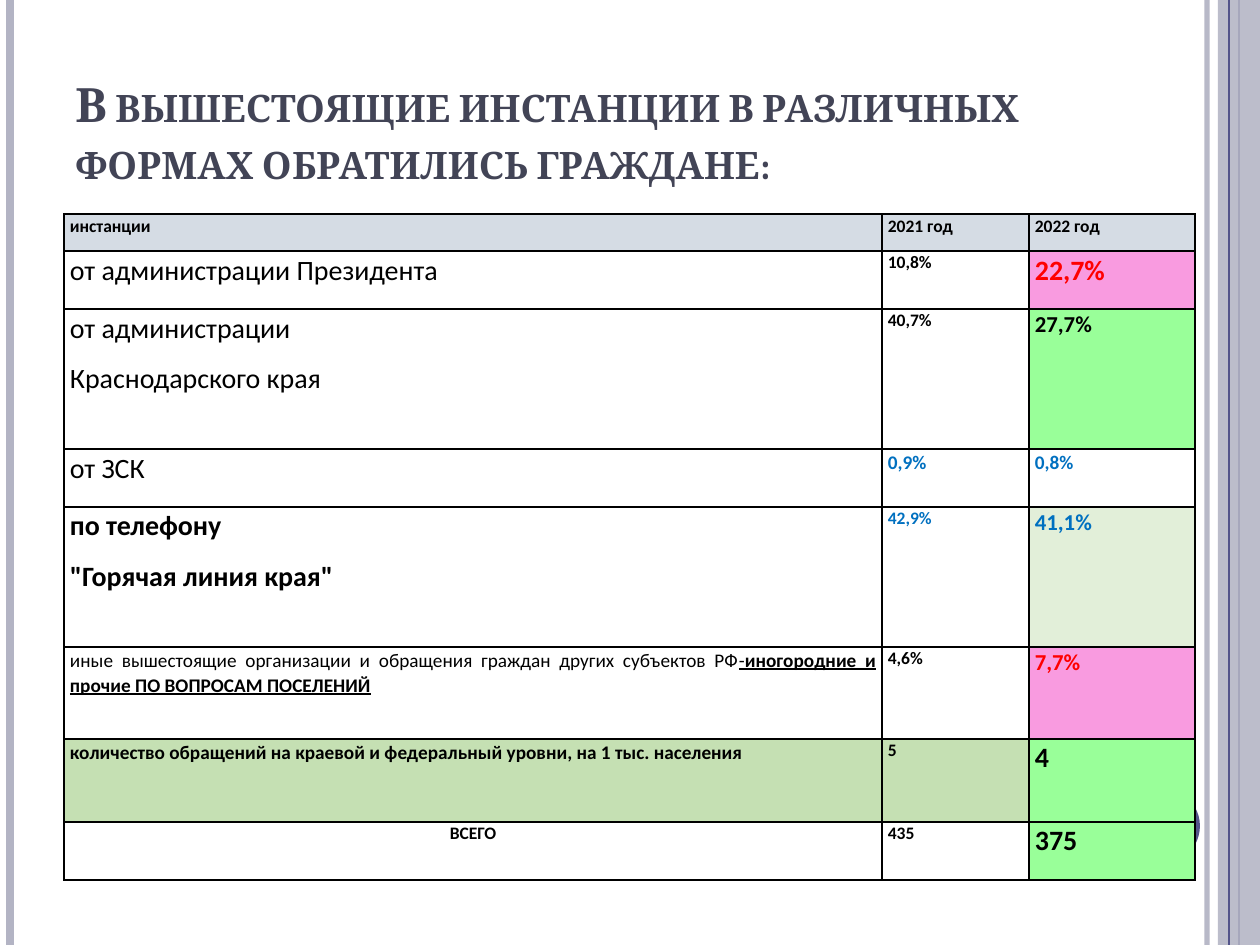
from dataclasses import dataclass
from typing import Optional

import pptx
import pptx.dml.color
import pptx.enum.shapes
import pptx.enum.text
import pptx.oxml
import pptx.oxml.ns
import pptx.util
from lxml import etree

EMU_PER_PX = 914400 / 126
WIDTH, HEIGHT = 1260, 945
BLACK, RED, BLUE = "000000", "FF0000", "0070C0"
INDIGO, LILAC = "53548A", "B3B4C4"
PINK, GREEN, OLIVE, HEADER = "F99BE0", "99FF99", "C5E0B3", "D5DCE4"
Align = pptx.enum.text.PP_ALIGN


@dataclass
class Run:
    text: str
    bold: bool = False
    underline: bool = False


@dataclass
class Cell:
    lines: list[str | list[Run]]
    size: int = 10
    bold: bool = True
    color: str = BLACK
    fill: Optional[str] = None
    align: Align = Align.JUSTIFY


@dataclass
class Rule:
    x: int
    color: str
    points: float
    opacity: int = 100


RULES_BEHIND = [Rule(1207, LILAC, 3, 93), Rule(10, LILAC, 4.5), Rule(1239, INDIGO, 1.5)]
RULE_IN_FRONT = Rule(1229, INDIGO, 0.75)

COLUMN_WIDTHS = [818, 147, 166]
ROWS = [
    (37, [Cell(["инстанции"], fill=HEADER), Cell(["2021 год"], fill=HEADER),
          Cell(["2022 год"], fill=HEADER)]),
    (58, [Cell(["от администрации Президента"], 16, False), Cell(["10,8%"]),
          Cell(["22,7%"], 16, color=RED, fill=PINK)]),
    (140, [Cell(["от администрации", "Краснодарского края"], 16, False), Cell(["40,7%"]),
           Cell(["27,7%"], 13, fill=GREEN)]),
    (58, [Cell(["от ЗСК"], 16, False), Cell(["0,9%"], 11, color=BLUE),
          Cell(["0,8%"], 11, color=BLUE)]),
    (140, [Cell(["по телефону", '"Горячая линия края"'], 16), Cell(["42,9%"], color=BLUE),
           Cell(["41,1%"], 13, color=BLUE, fill="E2EFD9")]),
    (92, [Cell([[Run("иные вышестоящие организации и обращения граждан других субъектов РФ"),
                 Run("-", underline=True),
                 Run("иногородние и прочие ПО ВОПРОСАМ ПОСЕЛЕНИЙ", True, True)]], 11, False),
          Cell(["4,6%"]), Cell(["7,7%"], 13, color=RED, fill=PINK)]),
    (83, [Cell(["количество обращений на краевой и федеральный уровни, на 1 тыс. населения"],
               11, fill=OLIVE),
          Cell(["5"], fill=OLIVE), Cell(["4"], 16, fill=GREEN)]),
    (58, [Cell(["ВСЕГО"], align=Align.CENTER), Cell(["435"]),
          Cell(["375"], 16, fill=GREEN)]),
]


def px(value: int) -> int:
    return round(value * EMU_PER_PX)


def rgb(color: str) -> pptx.dml.color.RGBColor:
    return pptx.dml.color.RGBColor.from_string(color)


def add_element(parent, tag: str, **attributes: str):
    element = etree.SubElement(parent, pptx.oxml.ns.qn(tag))
    for name, value in attributes.items():
        element.set(name, value)
    return element


def set_opacity(element, percent: int) -> None:
    for color in element.iter(pptx.oxml.ns.qn("a:srgbClr")):
        add_element(color, "a:alpha", val=str(percent * 1000))


def set_font(font, name: str, size: int, color: str, bold: bool) -> None:
    font.name = name
    font.size = pptx.util.Pt(size)
    font.bold = bold
    font.color.rgb = rgb(color)


def draw_rule(slide, rule: Rule) -> None:
    line = slide.shapes.add_connector(
        pptx.enum.shapes.MSO_CONNECTOR.STRAIGHT, px(rule.x), 0, px(rule.x), px(HEIGHT))
    line.line.color.rgb = rgb(rule.color)
    line.line.width = pptx.util.Pt(rule.points)
    properties = line._element.spPr
    if rule.opacity < 100:
        set_opacity(properties, rule.opacity)
    add_element(properties, "a:effectLst")


def draw_shape(slide, kind, left: int, top: int, width: int, height: int, color: str):
    shape = slide.shapes.add_shape(kind, px(left), px(top), px(width), px(height))
    shape.shadow.inherit = False
    shape.fill.solid()
    shape.fill.fore_color.rgb = rgb(color)
    shape.line.fill.background()
    return shape


def draw_title(slide, text: str) -> None:
    box = slide.shapes.add_textbox(px(63), px(38), px(1029), px(157))
    frame = box.text_frame
    frame.word_wrap = True
    frame.vertical_anchor = pptx.enum.text.MSO_ANCHOR.BOTTOM
    paragraph = frame.paragraphs[0]
    paragraph.text = text
    set_font(paragraph.font, "Cambria", 27, "424456", True)
    paragraph.runs[0]._r.get_or_add_rPr().set("cap", "small")


def draw_borders(table_cell) -> None:
    properties = table_cell._tc.get_or_add_tcPr()
    for position, side in enumerate(("a:lnL", "a:lnR", "a:lnT", "a:lnB")):
        border = pptx.oxml.parse_xml(
            f'<{side} {pptx.oxml.ns.nsdecls("a")} w="12700"><a:solidFill>'
            f'<a:srgbClr val="{BLACK}"/></a:solidFill></{side}>')
        properties.insert(position, border)


def fill_cell(table_cell, cell: Cell) -> None:
    table_cell.margin_left = table_cell.margin_right = px(6)
    table_cell.margin_top = table_cell.margin_bottom = 0
    if cell.fill:
        table_cell.fill.solid()
        table_cell.fill.fore_color.rgb = rgb(cell.fill)
    else:
        table_cell.fill.background()
    draw_borders(table_cell)
    frame = table_cell.text_frame
    for index, line in enumerate(cell.lines):
        paragraph = frame.add_paragraph() if index else frame.paragraphs[0]
        paragraph.alignment = cell.align
        paragraph.line_spacing = 1.07
        paragraph.space_after = pptx.util.Pt(8)
        set_font(paragraph.font, "Calibri", cell.size, cell.color, cell.bold)
        if isinstance(line, str):
            paragraph.add_run().text = line
            continue
        for part in line:
            run = paragraph.add_run()
            run.text = part.text
            run.font.bold = part.bold
            run.font.underline = part.underline


def draw_table(slide, left: int, top: int) -> None:
    height = sum(row_height for row_height, _ in ROWS)
    table = slide.shapes.add_table(
        len(ROWS), len(COLUMN_WIDTHS), px(left), px(top),
        px(sum(COLUMN_WIDTHS)), px(height)).table
    table.first_row = table.horz_banding = False
    for column, width in zip(table.columns, COLUMN_WIDTHS):
        column.width = px(width)
    for row, (row_height, cells) in zip(table.rows, ROWS):
        row.height = px(row_height)
        for table_cell, cell in zip(row.cells, cells):
            fill_cell(table_cell, cell)


def main() -> None:
    presentation = pptx.Presentation()
    presentation.slide_width, presentation.slide_height = px(WIDTH), px(HEIGHT)
    slide = presentation.slides.add_slide(presentation.slide_layouts[6])
    shapes = pptx.enum.shapes.MSO_SHAPE

    # Side decoration
    for rule in RULES_BEHIND:
        draw_rule(slide, rule)
    band = draw_shape(slide, shapes.RECTANGLE, 1218, 0, 42, HEIGHT, LILAC)
    set_opacity(band._element.spPr, 87)
    draw_rule(slide, RULE_IN_FRONT)
    draw_shape(slide, shapes.OVAL, 1124, 788, 76, 76, INDIGO)

    # Content
    draw_title(slide, "В вышестоящие инстанции в различных формах обратились граждане:")
    draw_table(slide, 64, 214)

    presentation.save("out.pptx")


if __name__ == "__main__":
    main()
